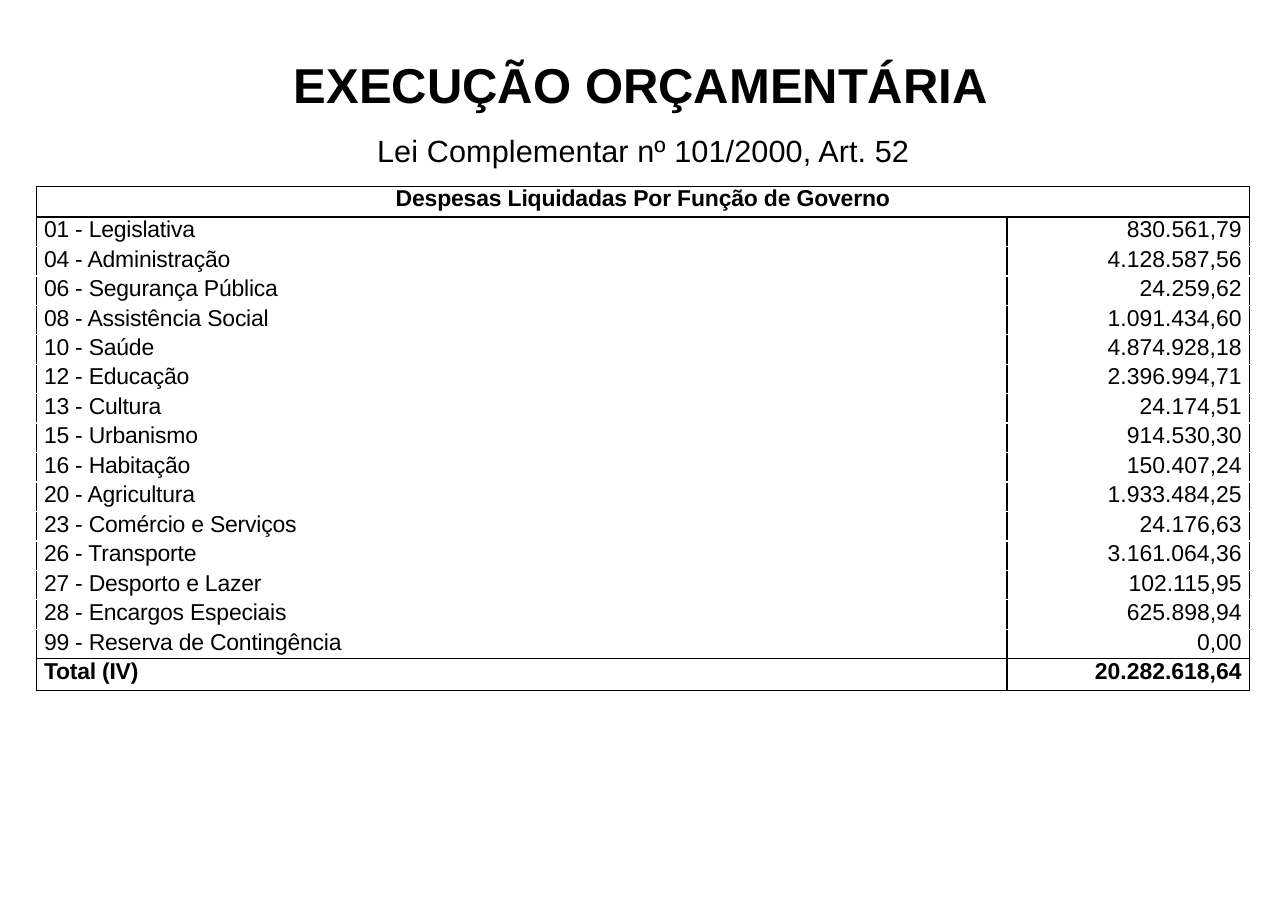
from lxml import etree
from pptx import Presentation
from pptx import util as u
from pptx.dml import color
from pptx.enum import text
from pptx.oxml import ns

BLACK = "000000"
ALIGN = text.PP_ALIGN


def write(frame, content, size, bold, align, tracking=0, line_spacing=None):
    frame.text = content
    paragraph = frame.paragraphs[0]
    paragraph.alignment = align
    paragraph.line_spacing = line_spacing
    run = paragraph.runs[0]
    for name, value in {"name": "Arial", "size": u.Pt(size), "bold": bold}.items():
        setattr(run.font, name, value)
    run.font.color.rgb = color.RGBColor.from_string(BLACK)
    run._r.get_or_add_rPr().set("spc", str(tracking))


def draw_borders(cell, sides):
    properties = cell._tc.get_or_add_tcPr()
    for side in sides:
        line = etree.SubElement(properties, ns.qn("a:ln" + side), w=str(u.Pt(0.85)))
        fill = etree.SubElement(line, ns.qn("a:solidFill"))
        etree.SubElement(fill, ns.qn("a:srgbClr"), val=BLACK)


expenses = [
    ("01 - Legislativa", "830.561,79"),
    ("04 - Administração", "4.128.587,56"),
    ("06 - Segurança Pública", "24.259,62"),
    ("08 - Assistência Social", "1.091.434,60"),
    ("10 - Saúde", "4.874.928,18"),
    ("12 - Educação", "2.396.994,71"),
    ("13 - Cultura", "24.174,51"),
    ("15 - Urbanismo", "914.530,30"),
    ("16 - Habitação", "150.407,24"),
    ("20 - Agricultura", "1.933.484,25"),
    ("23 - Comércio e Serviços", "24.176,63"),
    ("26 - Transporte", "3.161.064,36"),
    ("27 - Desporto e Lazer", "102.115,95"),
    ("28 - Encargos Especiais", "625.898,94"),
    ("99 - Reserva de Contingência", "0,00"),
    ("Total (IV)", "20.282.618,64"),
]

presentation = Presentation()
presentation.slide_width = u.Inches(11.69)
presentation.slide_height = u.Inches(8.27)
slide = presentation.slides.add_slide(presentation.slide_layouts[5])

title = slide.shapes.title
subtitle = slide.shapes.add_textbox(0, 0, 0, 0)
headings = [
    (title, (0.4, 0.5, 10.84, 0.6), "EXECUÇÃO ORÇAMENTÁRIA", 32, True, 0, 38.1),
    (subtitle, (3.37, 1.2, 4.94, 0.33), "Lei Complementar nº 101/2000, Art. 52", 20, False, 7, 23.9),
]
frame_format = {
    "margin_left": 0, "margin_right": 0, "margin_top": 0, "margin_bottom": 0,
    "word_wrap": True, "auto_size": text.MSO_AUTO_SIZE.NONE,
    "vertical_anchor": text.MSO_ANCHOR.TOP,
}
for shape, box, content, size, bold, tracking, spacing in headings:
    for name, value in zip(("left", "top", "width", "height"), box):
        setattr(shape, name, u.Inches(value))
    for name, value in frame_format.items():
        setattr(shape.text_frame, name, value)
    write(shape.text_frame, content, size, bold, ALIGN.CENTER, tracking, u.Pt(spacing))

last = len(expenses)
row_heights = [0.28] + [4.01 / (last - 1)] * (last - 1) + [0.29]
table_shape = slide.shapes.add_table(
    last + 1, 2, u.Inches(0.33), u.Inches(1.69), u.Inches(11.01), u.Inches(sum(row_heights)))
table = table_shape.table
table.first_row = False
table.horz_banding = False
for column, width in zip(table.columns, (8.81, 2.2)):
    column.width = u.Inches(width)
for row, height in zip(table.rows, row_heights):
    row.height = u.Inches(height)

cell_format = {
    "margin_left": u.Inches(0.07), "margin_right": u.Inches(0.07),
    "margin_top": 0, "margin_bottom": 0, "vertical_anchor": text.MSO_ANCHOR.TOP,
}
table.cell(0, 0).merge(table.cell(0, 1))
for index, row in enumerate(table.rows):
    sides = ["L", "R"]
    if index in (0, 1, last):
        sides.append("T")
    if index in (0, 1, last - 1, last):
        sides.append("B")
    for cell in row.cells:
        draw_borders(cell, sides)
        cell.fill.background()
        for name, value in cell_format.items():
            setattr(cell, name, value)

write(table.cell(0, 0).text_frame, "Despesas Liquidadas Por Função de Governo", 15, True, ALIGN.CENTER, -12)
for index, (function, amount) in enumerate(expenses, 1):
    bold = index == last
    write(table.cell(index, 0).text_frame, function, 15, bold, ALIGN.LEFT, -15)
    write(table.cell(index, 1).text_frame, amount, 15, bold, ALIGN.RIGHT)

presentation.save("out.pptx")
